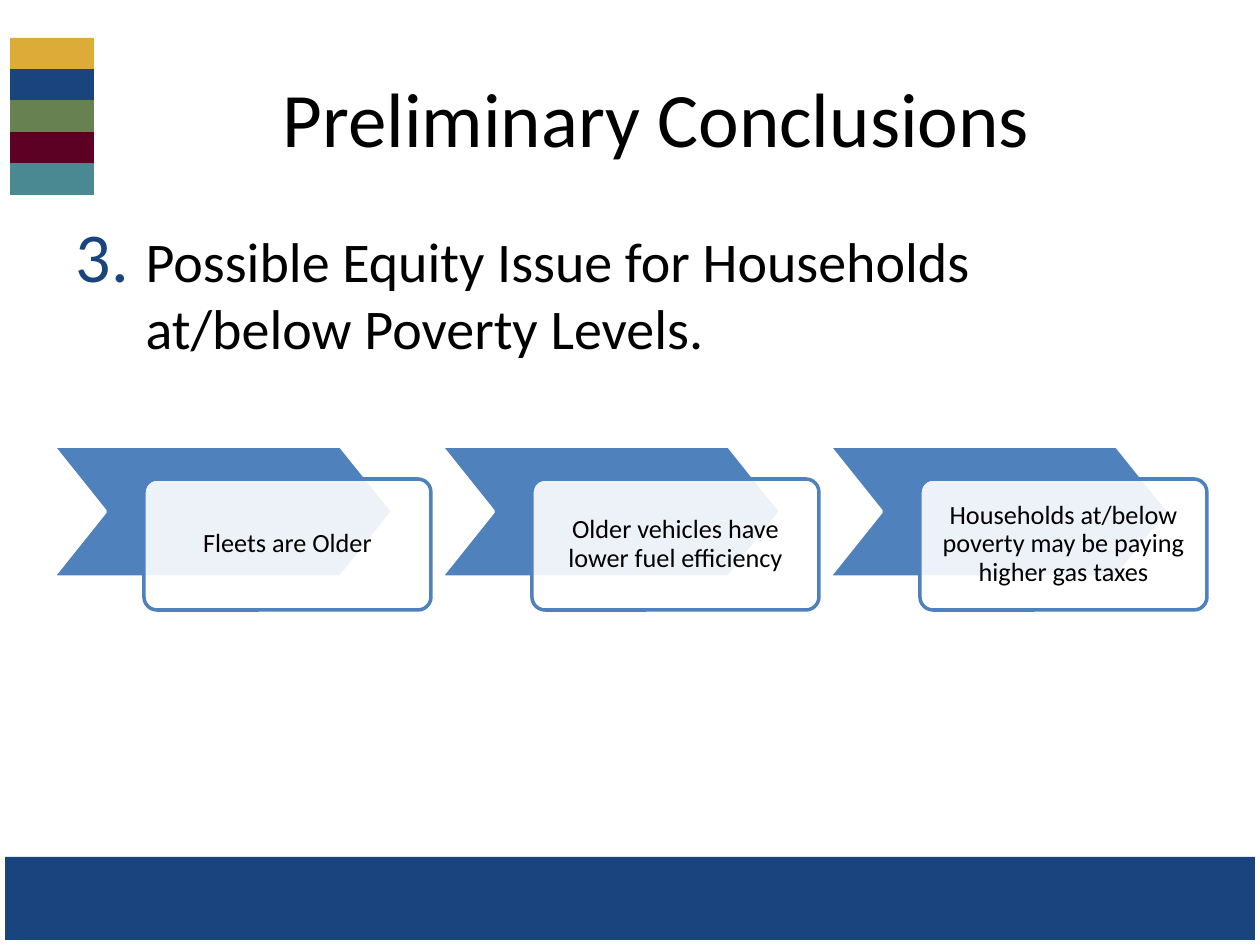
"""Builds the Preliminary Conclusions slide with its three-step chevron process."""

from lxml.etree import SubElement
from pptx import Presentation
from pptx.dml.color import RGBColor
from pptx.enum.shapes import MSO_SHAPE as Preset
from pptx.enum.text import MSO_ANCHOR as Anchor, PP_ALIGN as Align
from pptx.oxml.ns import qn
from pptx.util import Emu, Pt

EMU_PER_PX = 914400 / 126
FONT = "Calibri"
COLORS = {
    "white": "FFFFFF",
    "black": "000000",
    "navy": "19447E",
    "gold": "DDAB37",
    "green": "678250",
    "maroon": "5C0024",
    "teal": "4B8992",
    "blue": "4F81BD",
}
STRIPES = ["gold", "navy", "green", "maroon", "teal"]
STEPS = [
    "Fleets are Older",
    "Older vehicles have lower fuel efficiency",
    "Households at/below poverty may be paying higher gas taxes",
]


def px(length):
    """Turn pixels into EMU."""
    return Emu(round(length * EMU_PER_PX))


def color(name):
    """Look up a named colour."""
    return RGBColor.from_string(COLORS[name])


def add_run(paragraph, text, size):
    """Add one formatted run of text."""
    run = paragraph.add_run()
    run.text = text
    run.font.size = Pt(size)
    run.font.name = FONT
    run.font.color.rgb = color("black")


def add_block(slide, preset, box, fill=None, line=None, width=2):
    """Add a preset shape with an optional fill and outline."""
    shape = slide.shapes.add_shape(preset, *map(px, box))
    shape.shadow.inherit = False
    if fill:
        shape.fill.solid()
        shape.fill.fore_color.rgb = color(fill)
    else:
        shape.fill.background()
    if line:
        shape.line.color.rgb = color(line)
        shape.line.width = Pt(width)
    else:
        shape.line.fill.background()
    return shape


def set_opacity(shape, percent):
    """Make the solid fill of a shape partly transparent."""
    fill_color = shape._element.spPr.find(qn("a:solidFill")).find(qn("a:srgbClr"))
    SubElement(fill_color, qn("a:alpha"), val=str(percent * 1000))


def set_number(paragraph, start):
    """Number a paragraph with a larger navy numeral and a hanging indent."""
    properties = paragraph._p.get_or_add_pPr()
    properties.set("marL", str(px(70)))
    properties.set("indent", str(-px(70)))
    bullet_color = SubElement(properties, qn("a:buClr"))
    SubElement(bullet_color, qn("a:srgbClr"), val=COLORS["navy"])
    SubElement(properties, qn("a:buSzPct"), val="125000")
    SubElement(properties, qn("a:buFont"), typeface=FONT)
    SubElement(properties, qn("a:buAutoNum"), type="arabicPeriod", startAt=str(start))


def place(shape, box):
    """Move and size a placeholder."""
    shape.left, shape.top, shape.width, shape.height = map(px, box)


def add_background(slide):
    """Add the footer band, the colour stripes and the white frame."""
    add_block(slide, Preset.RECTANGLE, (0, 857, 1260, 88), "navy")
    for index, name in enumerate(STRIPES):
        top = 38 + 157 * index // 5
        bottom = 38 + 157 * (index + 1) // 5
        add_block(slide, Preset.RECTANGLE, (10, top, 84, bottom - top), name)
    add_block(slide, Preset.RECTANGLE, (0, 0, 1260, 945), line="white", width=6)


def fill_title(slide, text):
    """Place and fill the title."""
    title = slide.shapes.title
    place(title, (116, 38, 1081, 157))
    title.text_frame.vertical_anchor = Anchor.MIDDLE
    paragraph = title.text_frame.paragraphs[0]
    paragraph.alignment = Align.CENTER
    add_run(paragraph, text, 44)


def fill_body(slide, text, number):
    """Place the body and fill it with a numbered conclusion."""
    body = slide.placeholders[1]
    place(body, (63, 220, 1134, 620))
    paragraph = body.text_frame.paragraphs[0]
    paragraph.space_before = Pt(0)
    set_number(paragraph, number)
    add_run(paragraph, text, 32)


def add_step(slide, left, text):
    """Add a chevron overlapped by its caption card."""
    chevron = add_block(slide, Preset.CHEVRON, (left, 446, 340, 131), "blue", "white")
    chevron.adjustments[0] = 0.4
    card = add_block(
        slide, Preset.ROUNDED_RECTANGLE, (left + 91, 479, 287, 131), "white", "blue"
    )
    card.adjustments[0] = 0.1
    set_opacity(card, 90)
    frame = card.text_frame
    frame.word_wrap = True
    frame.vertical_anchor = Anchor.MIDDLE
    frame.margin_left = frame.margin_right = px(15)
    frame.margin_top = frame.margin_bottom = px(15)
    paragraph = frame.paragraphs[0]
    paragraph.alignment = Align.CENTER
    paragraph.line_spacing = 0.9
    add_run(paragraph, text, 15)


def main():
    """Build and save the slide."""
    presentation = Presentation()
    presentation.slide_width, presentation.slide_height = px(1260), px(945)
    slide = presentation.slides.add_slide(presentation.slide_layouts[1])
    add_background(slide)
    fill_title(slide, "Preliminary Conclusions")
    fill_body(slide, "Possible Equity Issue for Households at/below Poverty Levels.", 3)
    for index, text in enumerate(STEPS):
        add_step(slide, 53 + 388 * index, text)
    presentation.save("out.pptx")


if __name__ == "__main__":
    main()
